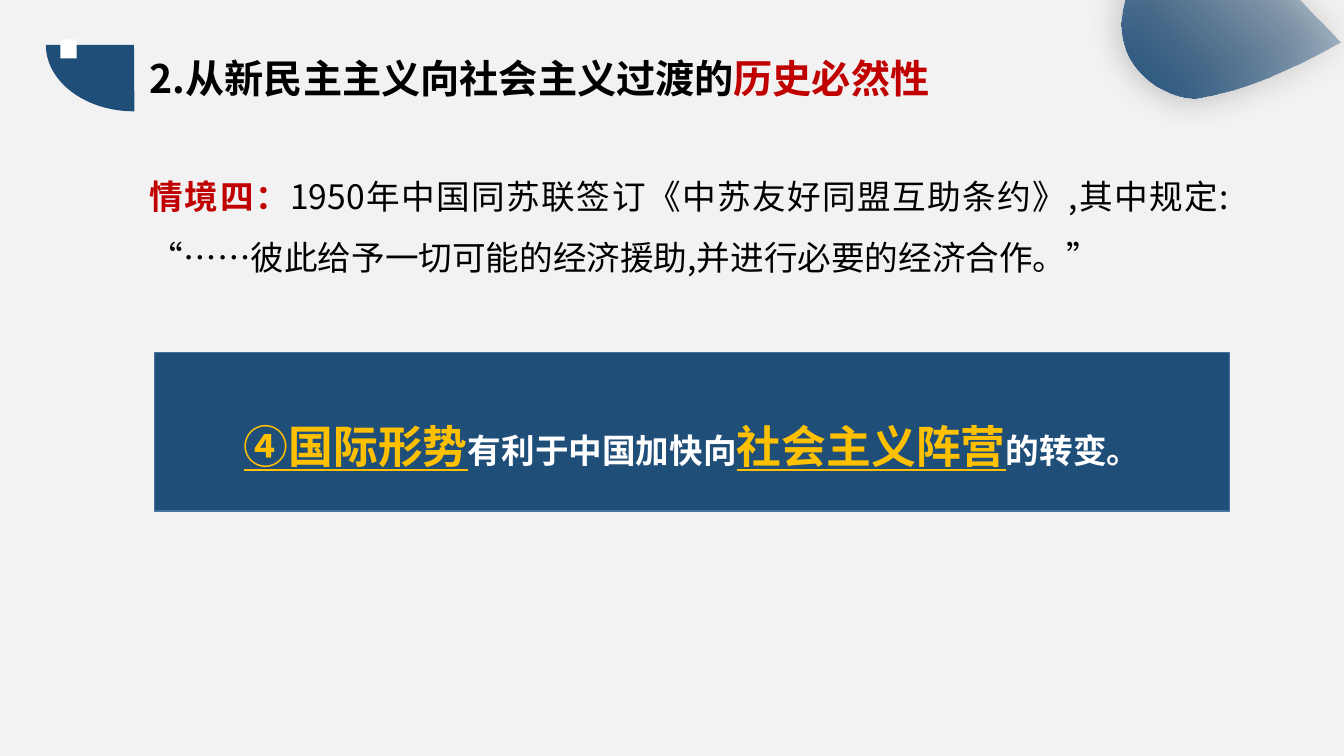
"""Builds the slide on the historical necessity of the transition to socialism."""
from math import cos, radians, sin

from lxml import etree
from pptx import Presentation
from pptx.dml.color import RGBColor
from pptx.enum.shapes import MSO_SHAPE
from pptx.enum.text import MSO_ANCHOR, MSO_AUTO_SIZE, PP_ALIGN
from pptx.oxml.ns import qn
from pptx.util import Pt

RECT, PIE = MSO_SHAPE.RECTANGLE, MSO_SHAPE.PIE
LEFT, CENTER, JUSTIFY = PP_ALIGN.LEFT, PP_ALIGN.CENTER, PP_ALIGN.JUSTIFY
MIDDLE, GROW = MSO_ANCHOR.MIDDLE, MSO_AUTO_SIZE.SHAPE_TO_FIT_TEXT
FONT = "Noto Sans CJK SC"
COLORS = {name: RGBColor.from_string(value) for name, value in {
    "paper": "F2F2F2", "navy": "1F4E79", "edge": "43739E", "white": "FFFFFF",
    "black": "000000", "red": "C00000", "gold": "FFC000"}.items()}


def add_block(shapes, kind, left, top, width, height, color):
    sp = shapes.add_shape(kind, Pt(left), Pt(top), Pt(width), Pt(height))
    sp.shadow.inherit = False
    sp.fill.solid()
    sp.fill.fore_color.rgb = COLORS[color]
    sp.line.fill.background()
    return sp


def write_runs(tf, align, spacing, runs):
    tf.word_wrap = True
    p = tf.paragraphs[0]
    p.alignment = align
    p.line_spacing = spacing
    for text, size, color, bold, underline in runs:
        r = p.add_run()
        r.text = text
        r.font.name = FONT
        r.font.size = Pt(size)
        r.font.bold = bold
        r.font.underline = underline
        r.font.color.rgb = COLORS[color]
        etree.SubElement(r.font._element, qn("a:ea"), typeface=FONT)


prs = Presentation()
prs.slide_width, prs.slide_height = Pt(960), Pt(540)
s = prs.slides.add_slide(prs.slide_layouts[6])
s.background.fill.solid()
s.background.fill.fore_color.rgb = COLORS["paper"]

badge = s.shapes.add_group_shape()
quarter = add_block(badge.shapes, PIE, 48.2, -31, 95, 126, "navy")
quarter.adjustments[0], quarter.adjustments[1] = 107.8, 162
quarter.rotation = 270
add_block(badge.shapes, RECT, 43.2, 28.1, 11.5, 13.7, "white")

PETAL_TURN = 225
PETAL_CENTER = (859.7, 11.9)
PETAL_START = (958.3, 30.2)
PETAL_CURVES = [
    ((926.6, 47.5), (892.1, 64.8), (853.2, 70.6)),
    ((827.3, 68.4), (803.5, 47.5), (802.1, 20.9)),
    ((799.9, -5.8), (828, -56.2), (843.8, -87.8)),
]
STEPS = 24
outline = [PETAL_START]
for c1, c2, end in PETAL_CURVES:
    start = outline[-1]
    for i in range(1, STEPS + 1):
        t = i / STEPS
        u = 1 - t
        outline.append(tuple(
            u**3 * a + 3 * u * u * t * b + 3 * u * t * t * c + t**3 * d
            for a, b, c, d in zip(start, c1, c2, end)))
cx, cy = PETAL_CENTER
ca, sa = cos(radians(PETAL_TURN)), sin(radians(PETAL_TURN))
points = [(Pt(cx + ca * (x - cx) + sa * (y - cy)),
           Pt(cy - sa * (x - cx) + ca * (y - cy))) for x, y in outline]
fb = s.shapes.build_freeform(*points[0])
fb.add_line_segments(points[1:], close=True)
petal = fb.convert_to_shape()
petal.rotation = PETAL_TURN
petal.line.fill.background()
petal.fill.gradient()
petal.fill.gradient_angle = 270
for stop in petal.fill.gradient_stops:
    stop.color.rgb = COLORS["navy"]
fade = petal._element.spPr.findall(".//" + qn("a:gs"))[-1][0]
etree.SubElement(fade, qn("a:alpha"), val="0")
petal.shadow.inherit = False
effects = petal._element.spPr.find(qn("a:effectLst"))
glow = etree.SubElement(effects, qn("a:outerShdw"), blurRad=str(Pt(25)),
                        dist="0", dir="0", algn="ctr", rotWithShape="0")
tint = etree.SubElement(glow, qn("a:srgbClr"), val=str(COLORS["black"]))
etree.SubElement(tint, qn("a:alpha"), val="40000")

answer = add_block(s.shapes, RECT, 110.2, 252, 768.2, 113, "navy")
answer.line.color.rgb = COLORS["edge"]
answer.line.width = Pt(1)
answer.text_frame.vertical_anchor = MIDDLE
write_runs(answer.text_frame, CENTER, 1.5, [
    ("④国际形势", 32, "gold", True, True),
    ("有利于中国加快向", 24, "white", True, False),
    ("社会主义阵营", 32, "gold", True, True),
    ("的转变。", 24, "white", True, False)])

TEXTS = [
    (35.3, 645, 41, LEFT, 1.0, [
        ("2.从新民主主义向社会主义过渡的", 28, "black", True, False),
        ("历史必然性", 28, "red", True, False)]),
    (108, 785, 89.3, JUSTIFY, 1.5, [
        ("情境四：", 24, "red", True, False),
        ("1950年中国同苏联签订《中苏友好同盟互助条约》,其中规定:“……彼此给予"
         "一切可能的经济援助,并进行必要的经济合作。”", 24, "black", False, False)]),
]
for top, width, height, align, spacing, runs in TEXTS:
    tb = s.shapes.add_textbox(Pt(100), Pt(top), Pt(width), Pt(height))
    write_runs(tb.text_frame, align, spacing, runs)
    tb.text_frame.auto_size = GROW

prs.save("out.pptx")
